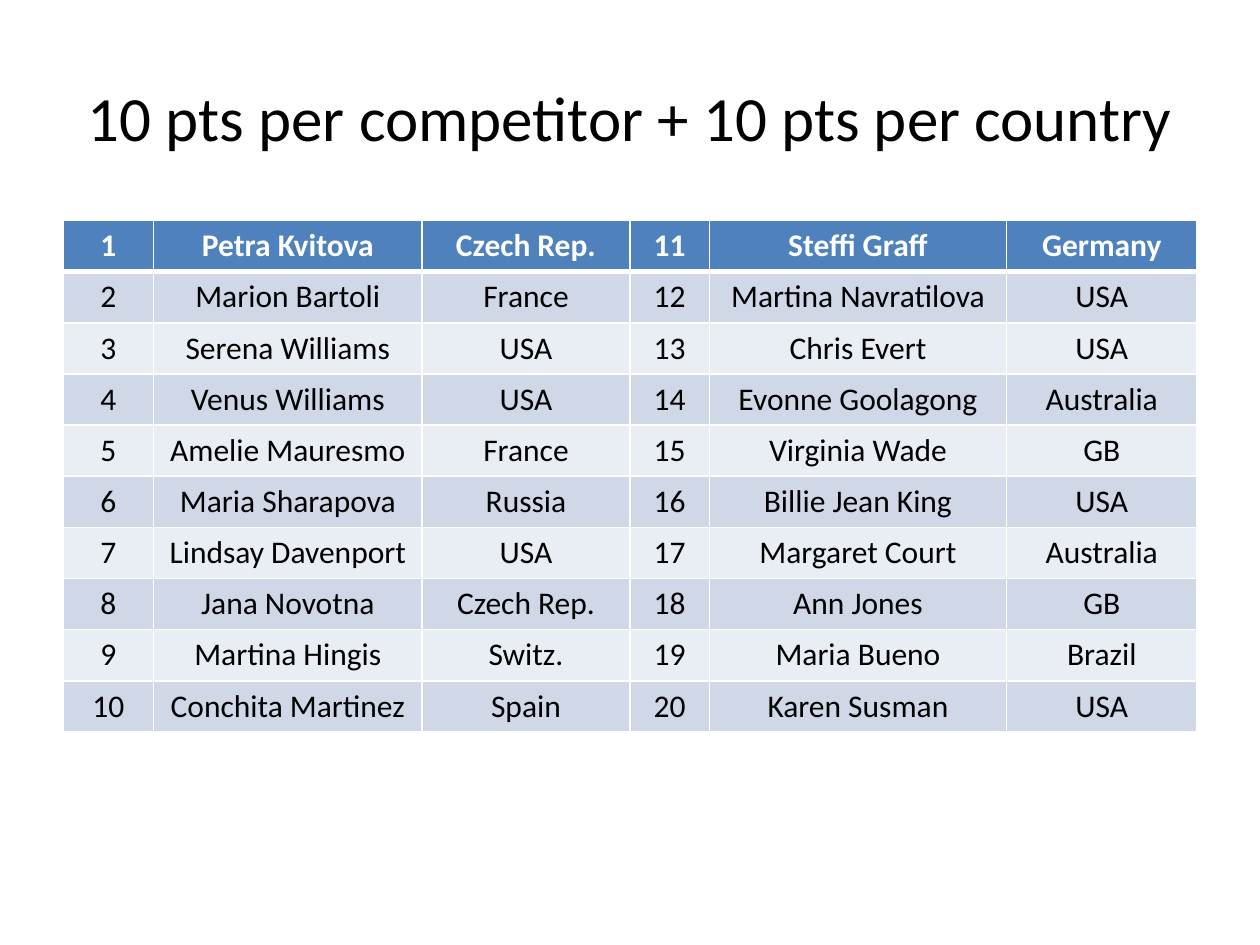
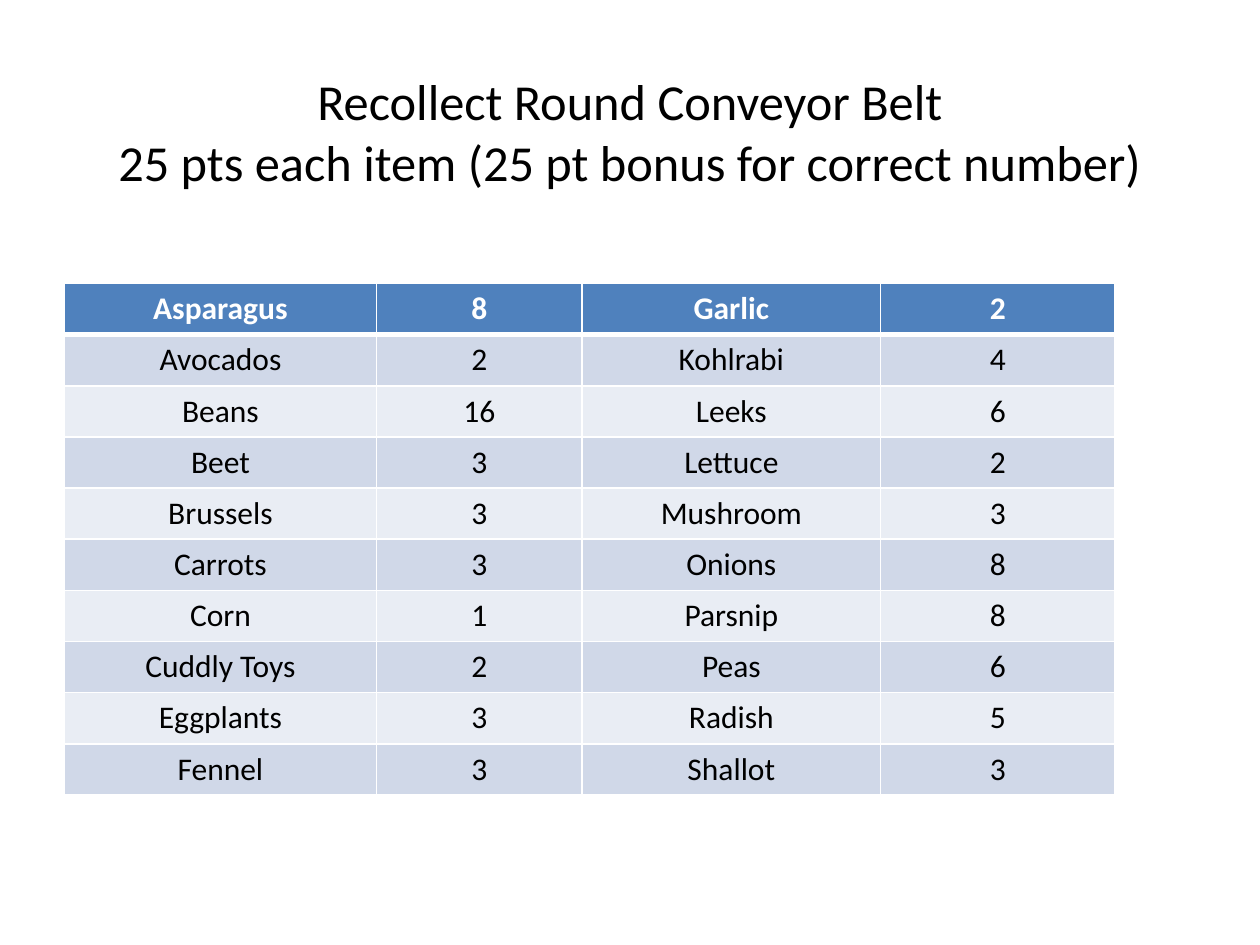
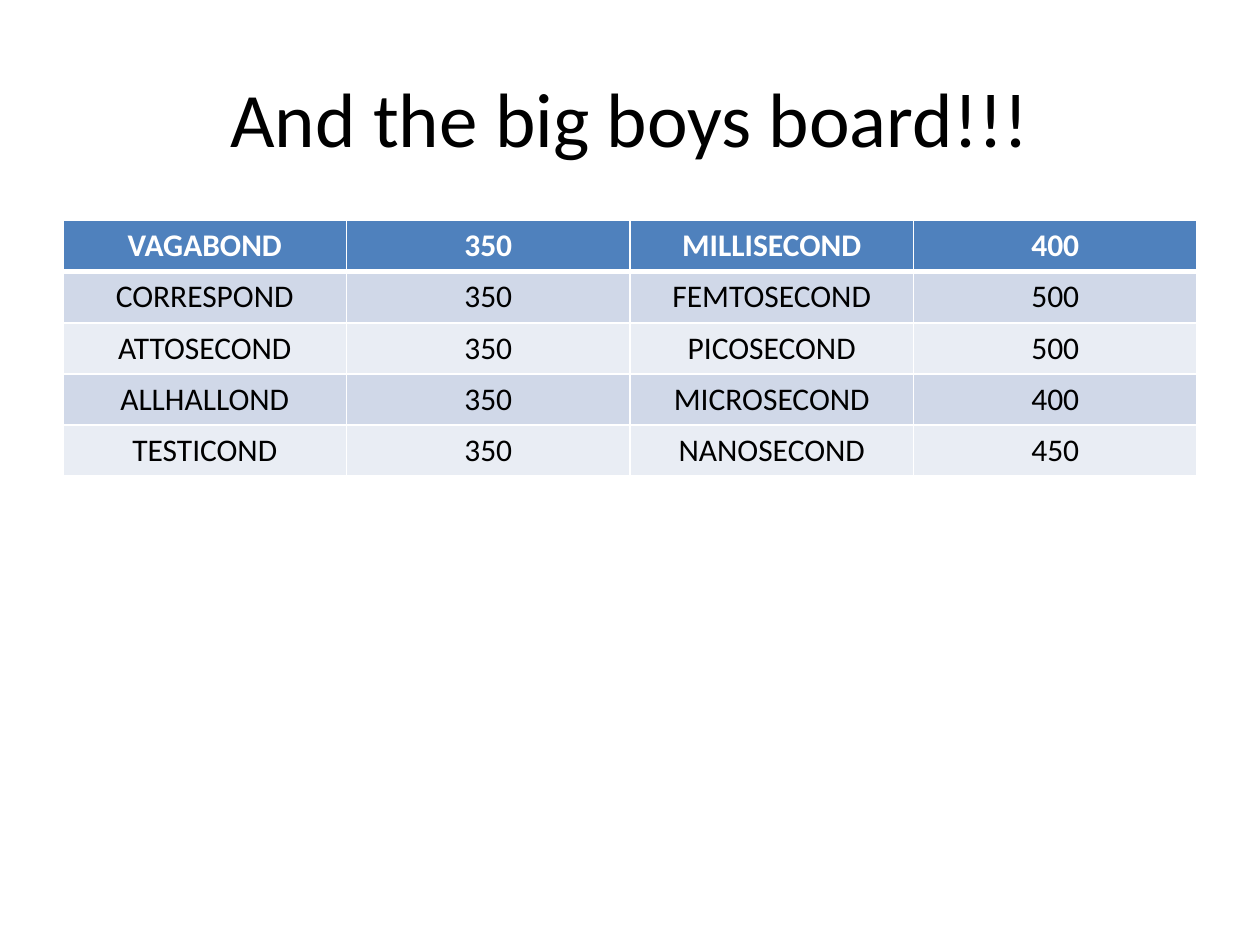
from lxml import etree
from pptx import Presentation
from pptx.dml.color import RGBColor
from pptx.enum import text
from pptx.oxml import ns
from pptx.util import Inches, Pt

FONT = "Calibri"
COLORS = {"header": "4F81BD", "odd": "D0D8E8", "even": "E9EDF4",
          "white": "FFFFFF", "black": "000000"}

# Content
PLAYERS = [
    ("Petra Kvitova", "Czech Rep."), ("Marion Bartoli", "France"),
    ("Serena Williams", "USA"), ("Venus Williams", "USA"),
    ("Amelie Mauresmo", "France"), ("Maria Sharapova", "Russia"),
    ("Lindsay Davenport", "USA"), ("Jana Novotna", "Czech Rep."),
    ("Martina Hingis", "Switz."), ("Conchita Martinez", "Spain"),
    ("Steffi Graff", "Germany"), ("Martina Navratilova", "USA"),
    ("Chris Evert", "USA"), ("Evonne Goolagong", "Australia"),
    ("Virginia Wade", "GB"), ("Billie Jean King", "USA"),
    ("Margaret Court", "Australia"), ("Ann Jones", "GB"),
    ("Maria Bueno", "Brazil"), ("Karen Susman", "USA"),
]
BELT_ITEMS = [
    ("Asparagus", 8), ("Avocados", 2), ("Beans", 16), ("Beet", 3),
    ("Brussels", 3), ("Carrots", 3), ("Corn", 1), ("Cuddly Toys", 2),
    ("Eggplants", 3), ("Fennel", 3),
    ("Garlic", 2), ("Kohlrabi", 4), ("Leeks", 6), ("Lettuce", 2),
    ("Mushroom", 3), ("Onions", 8), ("Parsnip", 8), ("Peas", 6),
    ("Radish", 5), ("Shallot", 3),
]
BIG_WORDS = [
    ("VAGABOND", 350), ("CORRESPOND", 350), ("ATTOSECOND", 350),
    ("ALLHALLOND", 350), ("TESTICOND", 350),
    ("MILLISECOND", 400), ("FEMTOSECOND", 500), ("PICOSECOND", 500),
    ("MICROSECOND", 400), ("NANOSECOND", 450),
]
SLIDES = [
    {"title": "10 pts per competitor + 10 pts per country",
     "size": 36, "title_height": 1.25, "at": (0.5, 1.75), "height": 4.06,
     "cols": (0.72, 2.13, 1.65, 0.63, 2.36, 1.51),
     "entries": [(n, *player) for n, player in enumerate(PLAYERS, 1)]},
    {"title": "Recollect Round Conveyor Belt\n"
              "25 pts each item (25 pt bonus for correct number)",
     "size": 28.8, "title_height": 1.48, "at": (0.51, 2.25), "height": 4.06,
     "cols": (2.48, 1.63, 2.37, 1.86), "entries": BELT_ITEMS},
    {"title": "And the big boys board!!!",
     "size": 44, "title_height": 1.25, "at": (0.5, 1.75), "height": 2.03,
     "cols": (2.25,) * 4, "entries": BIG_WORDS},
]


def style(p, size, color, bold=False):
    p.alignment = text.PP_ALIGN.CENTER
    p.font.name, p.font.size, p.font.bold = FONT, Pt(size), bold
    p.font.color.rgb = RGBColor.from_string(COLORS[color])


def add_title(s, title, size, height):
    sp = s.shapes.add_textbox(Inches(0.5), Inches(0.3), Inches(9), Inches(height))
    tf = sp.text_frame
    tf.word_wrap = True
    tf.vertical_anchor = text.MSO_ANCHOR.MIDDLE
    p = tf.paragraphs[0]
    p.text = title
    style(p, size, "black")


def set_borders(cell, row):
    """White grid lines, with a thicker one under the header row."""
    tc_pr = cell._tc.get_or_add_tcPr()
    widths = {"L": 1, "R": 1, "T": 3 if row == 1 else 1, "B": 3 if row == 0 else 1}
    for side, width in widths.items():
        ln = etree.SubElement(tc_pr, ns.qn(f"a:ln{side}"), w=str(Pt(width)))
        fill = etree.SubElement(ln, ns.qn("a:solidFill"))
        etree.SubElement(fill, ns.qn("a:srgbClr"), val=COLORS["white"])


def add_board(s, at, height, cols, entries):
    # The second half of the entries stands to the right of the first
    half = len(entries) // 2
    rows = [left + right for left, right in zip(entries[:half], entries[half:])]
    left, top = at
    table = s.shapes.add_table(half, len(cols), Inches(left), Inches(top),
                               Inches(sum(cols)), Inches(height)).table
    for column, width in zip(table.columns, cols):
        column.width = Inches(width)
    for r, values in enumerate(rows):
        fill = "header" if r == 0 else "odd" if r % 2 else "even"
        for c, value in enumerate(values):
            cell = table.cell(r, c)
            set_borders(cell, r)
            cell.fill.solid()
            cell.fill.fore_color.rgb = RGBColor.from_string(COLORS[fill])
            p = cell.text_frame.paragraphs[0]
            p.text = str(value)
            style(p, 18, "white" if r == 0 else "black", bold=r == 0)


def main():
    prs = Presentation()
    prs.slide_width, prs.slide_height = Inches(10), Inches(7.5)
    for board in SLIDES:
        s = prs.slides.add_slide(prs.slide_layouts[6])
        add_title(s, board["title"], board["size"], board["title_height"])
        add_board(s, board["at"], board["height"], board["cols"], board["entries"])
    prs.save("out.pptx")


if __name__ == "__main__":
    main()
